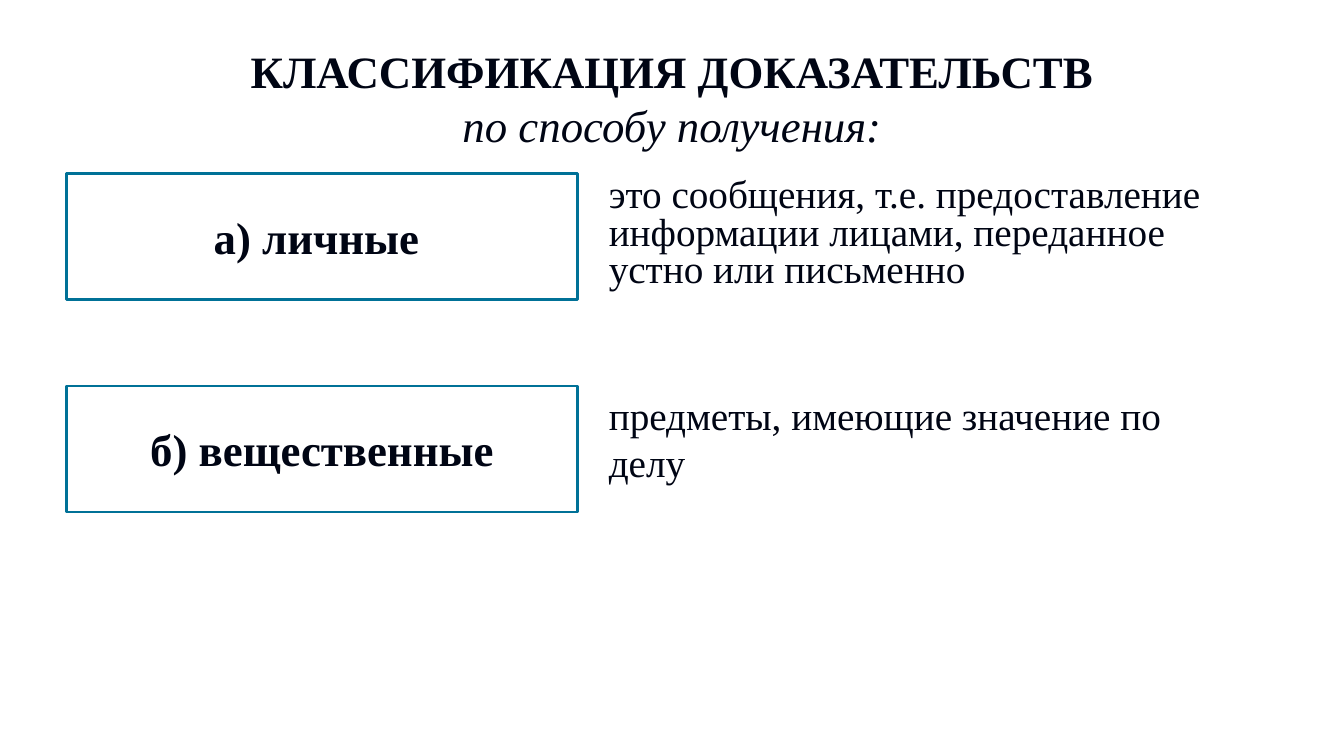
from dataclasses import dataclass

from pptx import Presentation
from pptx import util as u
from pptx.dml import color
from pptx.enum import shapes, text


@dataclass(frozen=True)
class Theme:
    font: str = "Times New Roman"
    ink: str = "000514"
    paper: str = "FFFFFF"
    frame: str = "007197"
    heading: int = 32
    body: int = 28
    frame_width: int = 2


THEME = Theme()
LABEL_LEFT, LABEL_WIDTH, LABEL_HEIGHT = 0.66, 5.07, 1.25
NOTE_LEFT = 5.94
FIRST_TOP, ROW_STEP = 1.72, 2.11
KINDS = [
    ("а) личные ",
     "это сообщения, т.е. предоставление информации лицами, переданное устно или письменно",
     6.64, 1.56, 0.8),
    ("б) вещественные", "предметы, имеющие значение по делу", 6.42, 1.17, 1.0),
]


def rgb(value):
    return color.RGBColor.from_string(value)


def write(para, words, size=THEME.body, bold=False, italic=False,
          align=text.PP_ALIGN.LEFT, spacing=1.0):
    para.alignment = align
    para.line_spacing = spacing
    span = para.add_run()
    span.text = words
    span.font.name = THEME.font
    span.font.size = u.Pt(size)
    span.font.bold = bold
    span.font.italic = italic
    span.font.color.rgb = rgb(THEME.ink)


def add_text_frame(page, left, top, width, height, anchor=text.MSO_ANCHOR.TOP):
    box = page.shapes.add_textbox(
        u.Inches(left), u.Inches(top), u.Inches(width), u.Inches(height))
    frame = box.text_frame
    frame.word_wrap = True
    frame.vertical_anchor = anchor
    return frame


def add_title(page, heading, subheading):
    frame = add_text_frame(page, 0, 0, 13.33, 1.5, anchor=text.MSO_ANCHOR.BOTTOM)
    frame.margin_bottom = 0
    write(frame.paragraphs[0], heading, size=THEME.heading, bold=True,
          align=text.PP_ALIGN.CENTER)
    write(frame.add_paragraph(), subheading, size=THEME.heading, italic=True,
          align=text.PP_ALIGN.CENTER)


def add_label(page, words, top):
    box = page.shapes.add_shape(
        shapes.MSO_SHAPE.RECTANGLE, u.Inches(LABEL_LEFT), u.Inches(top),
        u.Inches(LABEL_WIDTH), u.Inches(LABEL_HEIGHT))
    box.shadow.inherit = False
    box.fill.solid()
    box.fill.fore_color.rgb = rgb(THEME.paper)
    box.line.color.rgb = rgb(THEME.frame)
    box.line.width = u.Pt(THEME.frame_width)
    box.text_frame.word_wrap = True
    box.text_frame.vertical_anchor = text.MSO_ANCHOR.MIDDLE
    write(box.text_frame.paragraphs[0], words, size=THEME.heading, bold=True,
          align=text.PP_ALIGN.CENTER)


def add_note(page, words, top, width, height, spacing):
    frame = add_text_frame(page, NOTE_LEFT, top, width, height)
    write(frame.paragraphs[0], words, spacing=spacing)


def main():
    deck = Presentation()
    deck.slide_width, deck.slide_height = u.Inches(13.33), u.Inches(7.5)
    page = deck.slides.add_slide(deck.slide_layouts[6])
    add_title(page, "КЛАССИФИКАЦИЯ ДОКАЗАТЕЛЬСТВ", "по способу получения:")
    for row, (label, note, width, height, spacing) in enumerate(KINDS):
        top = FIRST_TOP + row * ROW_STEP
        add_label(page, label, top)
        add_note(page, note, top, width, height, spacing)
    deck.save("out.pptx")


if __name__ == "__main__":
    main()
